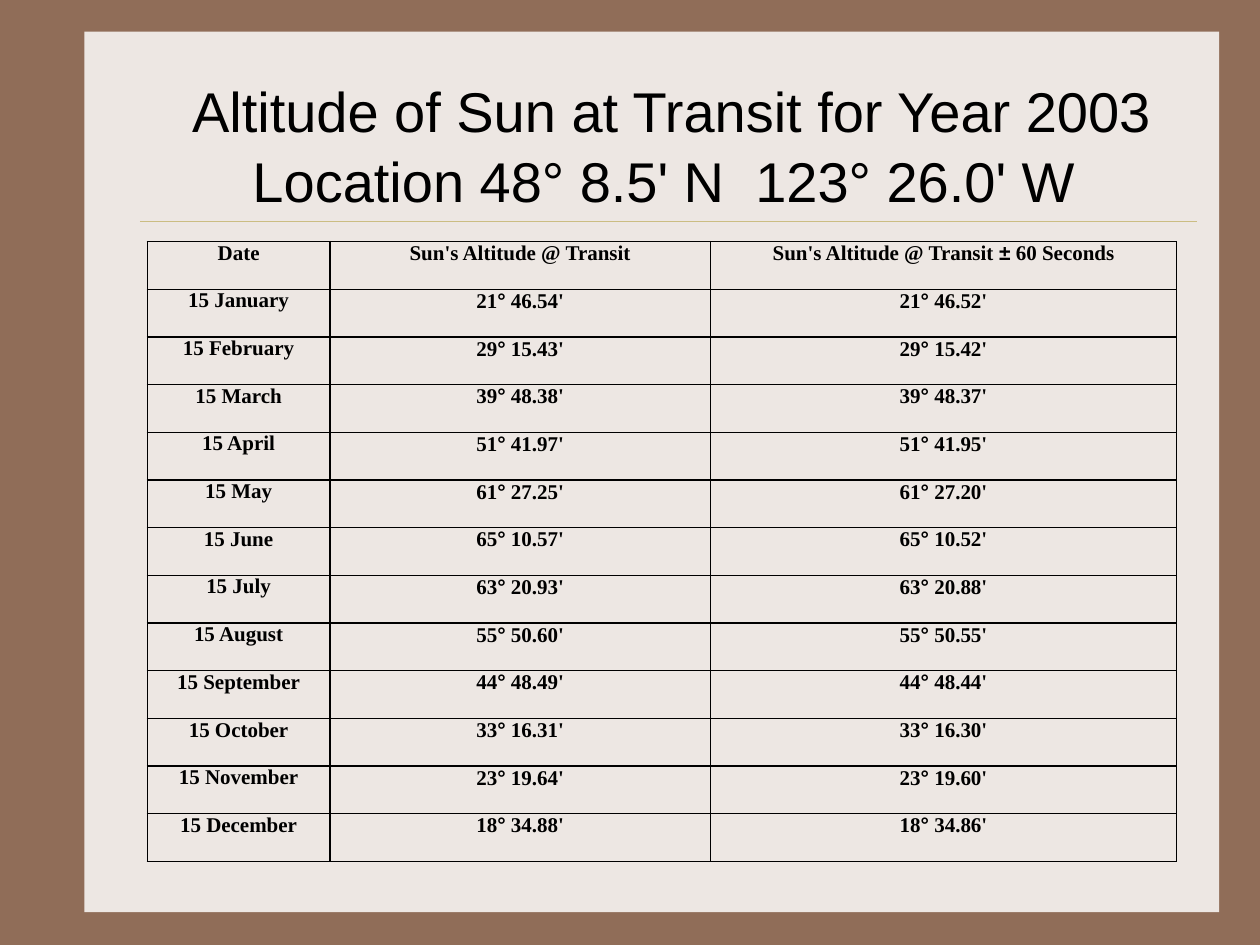
from itertools import groupby

from lxml import etree
from pptx import Presentation
from pptx.dml.color import RGBColor
from pptx.enum.shapes import MSO_CONNECTOR, MSO_SHAPE
from pptx.enum.text import MSO_ANCHOR, PP_ALIGN
from pptx.oxml import parse_xml
from pptx.oxml.ns import nsdecls, qn
from pptx.util import Cm, Pt

COLORS = {"frame": "906D58", "panel": "EDE7E3", "rule": "CBBD83", "ink": "000000"}
SYMBOLS = "±°"

TITLE = ["Altitude of Sun at Transit for Year 2003",
         "Location 48° 8.5' N  123° 26.0' W "]
HEADER = ["Date", "Sun's Altitude @ Transit", "Sun's Altitude @ Transit ± 60 Seconds"]
ALTITUDES = [
    ("15 January", "21° 46.54'", "21° 46.52'"),
    ("15 February", "29° 15.43'", "29° 15.42'"),
    ("15 March", "39° 48.38'", "39° 48.37'"),
    ("15 April", "51° 41.97'", "51° 41.95'"),
    ("15 May", "61° 27.25'", "61° 27.20'"),
    ("15 June", "65° 10.57'", "65° 10.52'"),
    ("15 July", "63° 20.93'", "63° 20.88'"),
    ("15 August", "55° 50.60'", "55° 50.55'"),
    ("15 September", "44° 48.49'", "44° 48.44'"),
    ("15 October", "33° 16.31'", "33° 16.30'"),
    ("15 November", "23° 19.64'", "23° 19.60'"),
    ("15 December", "18° 34.88'", "18° 34.86'"),
]


def rgb(name):
    return RGBColor.from_string(COLORS[name])


def add_text(p, text, size=12, font="Times New Roman", bold=False, color="ink"):
    """Add centred text to a paragraph, with its symbols in Arial."""
    p.alignment = PP_ALIGN.CENTER
    for is_symbol, chars in groupby(text, lambda ch: ch in SYMBOLS):
        r = p.add_run()
        r.text = "".join(chars)
        r.font.name = "Arial" if is_symbol else font
        r.font.size = Pt(size)
        r.font.bold = bold
        r.font.color.rgb = rgb(color)


def add_backdrop(s, left, top, width, height):
    """Framed panel with a thin rule below the title."""
    s.background.fill.solid()
    s.background.fill.fore_color.rgb = rgb("frame")

    panel = s.shapes.add_shape(MSO_SHAPE.RECTANGLE, left, top, width, height)
    panel.shadow.inherit = False
    panel.fill.solid()
    panel.fill.fore_color.rgb = rgb("panel")
    panel.line.fill.background()

    y = top + Cm(3.81)
    rule = s.shapes.add_connector(MSO_CONNECTOR.STRAIGHT, left + Cm(1.12), y,
                                  left + width - Cm(0.46), y)
    rule.line.color.rgb = rgb("rule")
    rule.line.width = Pt(0.25)
    etree.SubElement(rule._element.spPr, qn("a:effectLst"))


def add_title(s, left, top, width, height):
    tf = s.shapes.add_textbox(left, top, width, height).text_frame
    tf.word_wrap = True
    tf.vertical_anchor = MSO_ANCHOR.MIDDLE
    p = tf.paragraphs[0]
    p.line_spacing = 1.04
    for i, line in enumerate(TITLE):
        if i:
            p.add_line_break()
        add_text(p, line, size=32, font="Arial")


def set_borders(cell, width=Pt(1)):
    tc_pr = cell._tc.get_or_add_tcPr()
    for i, side in enumerate("LRTB"):
        tc_pr.insert(i, parse_xml(
            f'<a:ln{side} {nsdecls("a")} w="{width}"><a:solidFill>'
            f'<a:srgbClr val="{COLORS["ink"]}"/></a:solidFill></a:ln{side}>'))


def add_altitude_table(s, left, top, width, height):
    rows = [HEADER, *ALTITUDES]
    table = s.shapes.add_table(len(rows), len(HEADER), left, top, width, height).table
    table.first_row = table.horz_banding = False
    shares = (1.45, 3.02, 3.7)
    for column, share in zip(table.columns, shares):
        column.width = int(width * share / sum(shares))
    for i, values in enumerate(rows):
        table.rows[i].height = height // len(rows)
        for j, value in enumerate(values):
            cell = table.cell(i, j)
            cell.margin_left = cell.margin_right = Cm(0.18)
            cell.margin_top = cell.margin_bottom = 0
            cell.fill.background()
            set_borders(cell)
            add_text(cell.text_frame.paragraphs[0], value, bold=True)


def main():
    prs = Presentation()
    prs.slide_width, prs.slide_height = Cm(25.4), Cm(19.05)
    s = prs.slides.add_slide(prs.slide_layouts[6])
    add_backdrop(s, Cm(1.7), Cm(0.64), Cm(22.88), Cm(17.75))
    add_title(s, Cm(2.97), Cm(1.21), Cm(21.16), Cm(3.38))
    add_altitude_table(s, Cm(2.97), Cm(4.87), Cm(20.75), Cm(12.5))
    prs.save("out.pptx")


if __name__ == "__main__":
    main()
